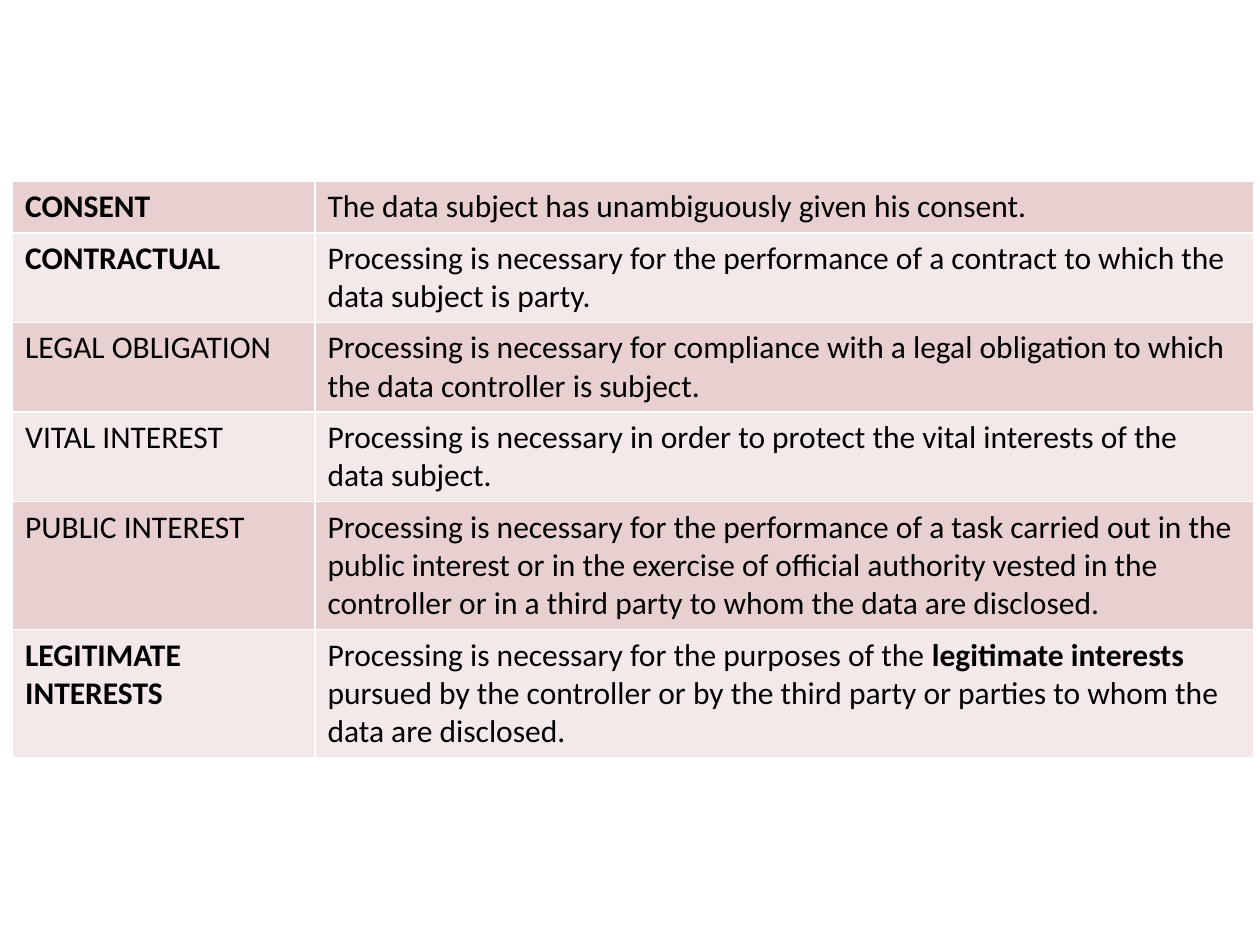
from pptx import Presentation
from pptx.dml.color import RGBColor
from pptx.oxml import parse_xml
from pptx.oxml.ns import nsdecls
from pptx.util import Inches, Pt

COLORS = {"text": "000000", "border": "FFFFFF", "dark band": "E8D0D0", "light band": "F4E9E9"}
COLUMN_WIDTHS = (2.4, 7.45)
ROW_HEIGHT = 0.41  # minimum; rows grow with their text

# Each cell is a list of (text, bold) runs
LEGAL_BASES = [
    ([("CONSENT", True)],
     [("The data subject has unambiguously given his consent.", False)]),
    ([("CONTRACTUAL", True)],
     [("Processing is necessary for the performance of a contract to which the "
       "data subject is party.", False)]),
    ([("LEGAL OBLIGATION", False)],
     [("Processing is necessary for compliance with a legal obligation to which "
       "the data controller is subject.", False)]),
    ([("VITAL INTEREST", False)],
     [("Processing is necessary in order to protect the vital interests of the "
       "data subject.", False)]),
    ([("PUBLIC INTEREST", False)],
     [("Processing is necessary for the performance of a task carried out in the "
       "public interest or in the exercise of official authority vested in the "
       "controller or in a third party to whom the data are disclosed.", False)]),
    ([("LEGITIMATE INTERESTS", True)],
     [("Processing is necessary for the purposes of the ", False),
      ("legitimate interests", True),
      (" pursued by the controller or by the third party or parties to whom the "
       "data are disclosed.", False)]),
]


def style_cell(cell, fill):
    """Give the cell a solid fill and thin borders on all four sides."""
    properties = cell._tc.get_or_add_tcPr()
    for side in ("lnL", "lnR", "lnT", "lnB"):
        properties.append(parse_xml(
            f'<a:{side} {nsdecls("a")} w="{Pt(1)}"><a:solidFill>'
            f'<a:srgbClr val="{COLORS["border"]}"/></a:solidFill></a:{side}>'))
    cell.fill.solid()
    cell.fill.fore_color.rgb = RGBColor.from_string(COLORS[fill])


presentation = Presentation()
presentation.slide_width = Inches(10)
presentation.slide_height = Inches(7.5)
slide = presentation.slides.add_slide(presentation.slide_layouts[6])

frame = slide.shapes.add_table(
    len(LEGAL_BASES), len(COLUMN_WIDTHS), Inches(0.1), Inches(1.44),
    Inches(sum(COLUMN_WIDTHS)), Inches(ROW_HEIGHT * len(LEGAL_BASES)))
table = frame.table
table.first_row = False
table.horz_banding = False
for column, width in zip(table.columns, COLUMN_WIDTHS):
    column.width = Inches(width)

for row_index, (row, contents) in enumerate(zip(table.rows, LEGAL_BASES)):
    row.height = Inches(ROW_HEIGHT)
    for cell, runs in zip(row.cells, contents):
        style_cell(cell, "light band" if row_index % 2 else "dark band")
        paragraph = cell.text_frame.paragraphs[0]
        for text, bold in runs:
            run = paragraph.add_run()
            run.text = text
            for name, value in {"name": "Calibri", "size": Pt(18), "bold": bold}.items():
                setattr(run.font, name, value)
            run.font.color.rgb = RGBColor.from_string(COLORS["text"])
frame.height = Inches(4.51)

presentation.save("out.pptx")
